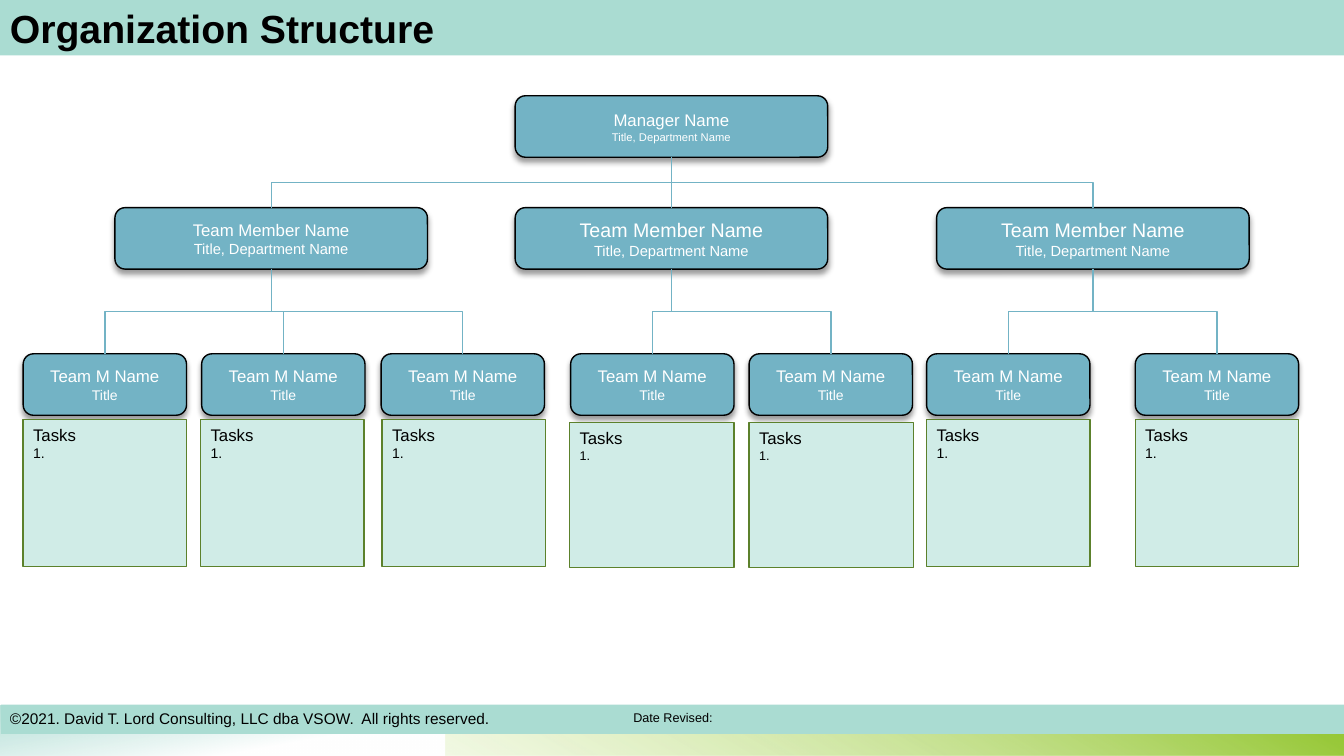
from lxml import etree
from pptx import Presentation
from pptx.dml.color import RGBColor
from pptx.enum import shapes, text
from pptx.oxml import ns
from pptx.util import Inches, Pt

# Content
TITLE = "Organization Structure"
NOTICE = "©2021. David T. Lord Consulting, LLC dba VSOW.\u00a0 All rights reserved."
DATE = "Date Revised:"
ROLE = "Title, Department Name"
HEAD = ("Manager Name", ROLE)
LEAD = ("Team Member Name", ROLE)
STAFF = ("Team M Name", "Title")
TASKS = "Tasks"

# Each team: lead's left edge, lead's name size, staff as (card left, task left, task style)
TEAMS = [
    (1.14, 12, [(0.23, 0.23, "tall"), (2.0, 1.99, "tall"), (3.78, 3.79, "tall")]),
    (5.11, 14, [(5.66, 5.65, "short"), (7.43, 7.43, "short")]),
    (9.29, 14, [(9.19, 9.19, "tall"), (11.26, 11.26, "tall")]),
]
# Task box: top, width, height, size of numbered text
STYLES = {"tall": (4.16, 1.62, 1.46, 10), "short": (4.19, 1.63, 1.44, 9)}

THEME = {
    "font": "Arial", "band": "AADCD2", "card": "73B3C5", "edge": "000000",
    "task": "D0ECE7", "rim": "5C812C", "ink": "000000", "pale": "FFFFFF",
    "title": 28, "name": 12, "head_role": 8, "lead_role": 10.5,
    "staff_role": 10, "date": 9, "notice": 11,
}

# Layout
WIDE, HIGH = 13.33, 7.5
HEAD_X, HEAD_Y, LEAD_Y, STAFF_Y = 5.11, 0.95, 2.06, 3.51
BOX_W, CARD_W, CARD_H = 3.1, 1.62, 0.61

deck = Presentation()
deck.slide_width, deck.slide_height = Inches(WIDE), Inches(HIGH)
slide = deck.slides.add_slide(deck.slide_layouts[6])
KIND = shapes.MSO_SHAPE


def rgb(key):
    return RGBColor.from_string(THEME[key])


def node(parent, tag, **attrs):
    item = etree.SubElement(parent, ns.qn(tag))
    for key, val in attrs.items():
        item.set(key, str(val))
    return item


def add_box(kind, x, y, w, h, fill, line=None):
    box = slide.shapes.add_shape(kind, Inches(x), Inches(y), Inches(w), Inches(h))
    box.shadow.inherit = False
    box.fill.solid()
    box.fill.fore_color.rgb = rgb(fill)
    if line:
        box.line.color.rgb = rgb(line)
        box.line.width = Pt(1)
    else:
        box.line.fill.background()
    return box


def write(box, lines, color="ink", align="LEFT", anchor="TOP", bold=False):
    frame = box.text_frame
    frame.word_wrap = True
    frame.vertical_anchor = getattr(text.MSO_ANCHOR, anchor)
    for i, (words, size) in enumerate(lines):
        para = frame.add_paragraph() if i else frame.paragraphs[0]
        para.alignment = getattr(text.PP_ALIGN, align)
        run = para.add_run()
        run.text = words
        font = run.font
        font.name, font.size, font.bold = THEME["font"], Pt(size), bold
        font.color.rgb = rgb(color)
    return frame


def add_glow(x, w, angle, turn, stops):
    """Footer strip with a gradient; stops are (place, colour, opacity)."""
    box = add_box(KIND.RECTANGLE, x, 7, w, 0.5, "pale")
    box.rotation = turn
    props = box._element.spPr
    props.xfrm.set("flipH", "1")
    old = props.find(ns.qn("a:solidFill"))
    grad = etree.Element(ns.qn("a:gradFill"), rotWithShape="1")
    row = node(grad, "a:gsLst")
    for place, color, opacity in stops:
        stop = node(row, "a:gs", pos=place * 1000)
        tint = node(stop, "a:srgbClr", val=color)
        node(tint, "a:alpha", val=opacity * 1000)
    node(grad, "a:lin", ang=angle * 60000, scaled=0)
    props.replace(old, grad)


def add_card(x, y, w, words, sizes):
    box = add_box(KIND.ROUNDED_RECTANGLE, x, y, w, CARD_H, "card", "edge")
    fx = box._element.spPr.find(ns.qn("a:effectLst"))
    cast = node(fx, "a:outerShdw", blurRad=Pt(4), dist=Pt(3), dir=5400000,
                algn="t", rotWithShape=0)
    node(node(cast, "a:srgbClr", val="000000"), "a:alpha", val=40000)
    frame = write(box, zip(words, sizes), "pale", "CENTER", "MIDDLE")
    frame.margin_left = frame.margin_right = 0


def add_tasks(x, style):
    y, w, h, size = STYLES[style]
    box = add_box(KIND.RECTANGLE, x, y, w, h, "task", "rim")
    # The number shows only beside a run that is not empty
    frame = write(box, [(TASKS, THEME["name"]), (" ", size)])
    props = frame.paragraphs[1]._p.get_or_add_pPr()
    props.set("marL", str(Inches(0.19)))
    props.set("indent", str(Inches(-0.19)))
    node(props, "a:buFont", typeface="+mj-lt")
    node(props, "a:buAutoNum", type="arabicPeriod")


def add_link(x1, y1, x2, y2):
    """Elbow that leaves downward: a flat elbow turned about its centre."""
    side = 1 if x2 > x1 else -1
    mid_x, mid_y = (x1 + x2) / 2, (y1 + y2) / 2
    half_w, half_h = side * (y2 - y1) / 2, abs(x2 - x1) / 2
    link = slide.shapes.add_connector(
        shapes.MSO_CONNECTOR.ELBOW,
        Inches(mid_x + half_w), Inches(mid_y - half_h),
        Inches(mid_x - half_w), Inches(mid_y + half_h))
    link.line.color.rgb = rgb("card")
    link.line.width = Pt(1)
    props = link._element.spPr
    props.xfrm.set("rot", str((-side * 90 % 360) * 60000))
    node(props, "a:effectLst")


def main():
    # Footer glow and title band
    add_glow(0, WIDE, 100, 180, [(69, "FFFFFF", 100), (100, "AADCD2", 85)])
    add_glow(4.42, 8.92, 240, 0, [(0, "E8F5CF", 55), (99, "91C52B", 100)])
    band = add_box(KIND.RECTANGLE, 0, -0.01, WIDE, 0.56, "band")
    write(band, [(TITLE, THEME["title"])], bold=True)

    # Manager, leads, staff and their tasks
    add_card(HEAD_X, HEAD_Y, BOX_W, HEAD, (THEME["name"], THEME["head_role"]))
    top = HEAD_X + BOX_W / 2
    for lead_x, size, staff in TEAMS:
        add_card(lead_x, LEAD_Y, BOX_W, LEAD, (size, THEME["lead_role"]))
        mid = lead_x + BOX_W / 2
        add_link(top, HEAD_Y + CARD_H, mid, LEAD_Y)
        for card_x, task_x, style in staff:
            add_card(card_x, STAFF_Y, CARD_W, STAFF,
                     (THEME["name"], THEME["staff_role"]))
            add_link(mid, LEAD_Y + CARD_H, card_x + CARD_W / 2, STAFF_Y)
            add_tasks(task_x, style)

    # Footer band and notice
    foot = add_box(KIND.RECTANGLE, 0.01, 6.99, WIDE, 0.29, "band")
    write(foot, [(DATE, THEME["date"])], align="CENTER")
    note = slide.shapes.add_textbox(0, Inches(6.99), Inches(6.75), Inches(0.29))
    write(note, [(NOTICE, THEME["notice"])])
    deck.save("out.pptx")


if __name__ == "__main__":
    main()
